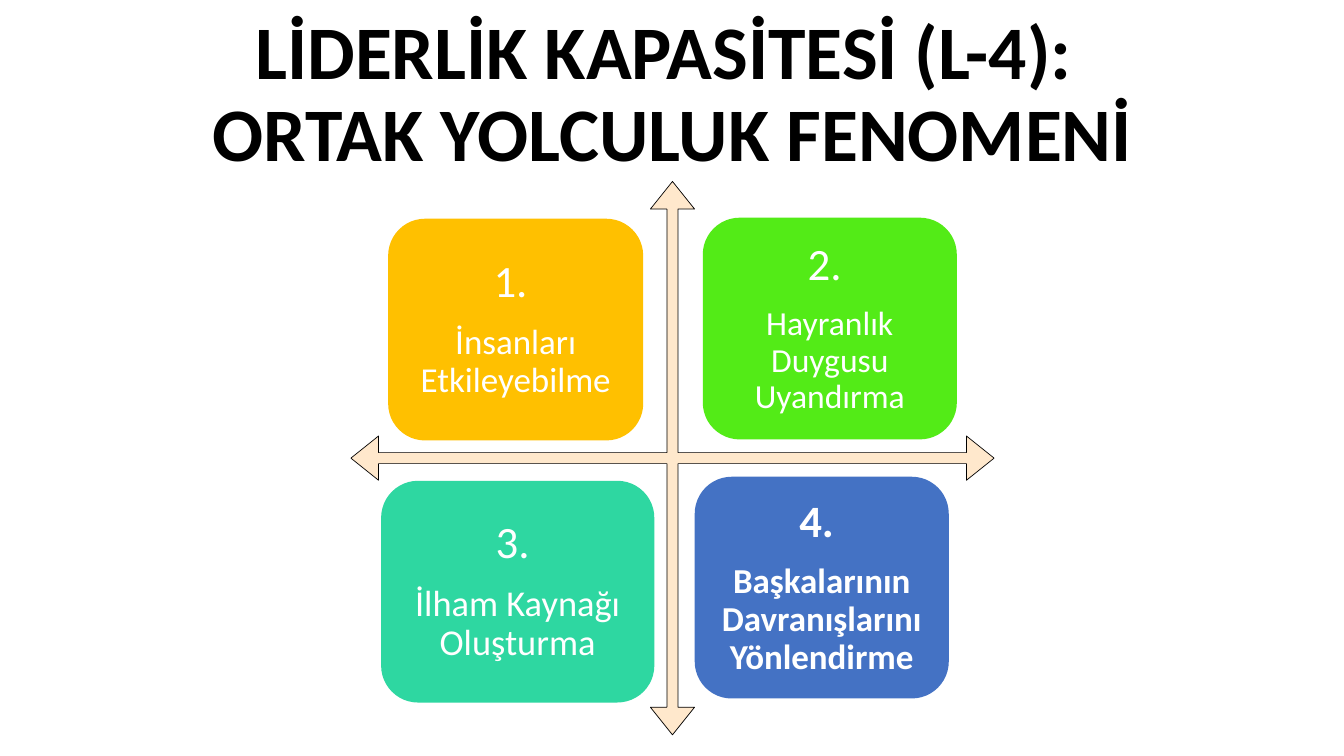
from pptx import Presentation
from pptx.dml.color import RGBColor
from pptx.enum.shapes import MSO_SHAPE
from pptx.enum.text import MSO_ANCHOR, PP_ALIGN
from pptx.util import Inches, Pt

FONT = "Calibri"
QUADRANTS = [
    # left, top, width, fill, number, caption, caption size, bold
    (3.85, 2.17, 2.53, "FFC000", "1. ", "İnsanları Etkileyebilme", 25, False),
    (6.97, 2.16, 2.52, "53EB17", "2. ", "Hayranlık Duygusu Uyandırma", 24, False),
    (3.78, 4.77, 2.71, "2ED7A1", "3. ", "İlham Kaynağı Oluşturma", 26, False),
    (6.89, 4.73, 2.52, "4472C4", "4. ",
     "Başkalarının Davranışlarını Yönlendirme", 25, True),
]
QUADRANT_HEIGHT = 2.2


def color(hex_code):
    return RGBColor.from_string(hex_code)


def write(paragraph, text, size, fill, bold=False, space_after=0):
    paragraph.text = text
    paragraph.alignment = PP_ALIGN.CENTER
    paragraph.line_spacing = 0.9
    paragraph.space_after = Pt(space_after)
    font = paragraph.font
    font.name, font.size, font.bold = FONT, Pt(size), bold
    font.color.rgb = color(fill)


def add_filled_shape(slide, preset, left, top, width, height, fill):
    shape = slide.shapes.add_shape(
        preset, Inches(left), Inches(top), Inches(width), Inches(height))
    shape.shadow.inherit = False
    shape.fill.solid()
    shape.fill.fore_color.rgb = color(fill)
    shape.line.fill.background()
    return shape


def add_title(slide, text):
    title = slide.shapes.add_textbox(
        Inches(0.92), Inches(0.4), Inches(11.5), Inches(1.11))
    frame = title.text_frame
    frame.word_wrap = True
    frame.vertical_anchor = MSO_ANCHOR.MIDDLE
    write(frame.paragraphs[0], text, size=54, fill="000000", bold=True)


def add_axes(slide):
    axes = add_filled_shape(
        slide, MSO_SHAPE.QUAD_ARROW, 3.48, 1.8, 6.38, 5.49, "FFE8CC")
    for index, ratio in enumerate((0.02, 0.04, 0.05)):
        axes.adjustments[index] = ratio
    axes.line.color.rgb = color("000000")
    axes.line.width = Pt(0.5)


def add_quadrant(slide, left, top, width, fill, number, caption, size, bold):
    quadrant = add_filled_shape(slide, MSO_SHAPE.ROUNDED_RECTANGLE,
                                left, top, width, QUADRANT_HEIGHT, fill)
    frame = quadrant.text_frame
    frame.word_wrap = True
    frame.vertical_anchor = MSO_ANCHOR.MIDDLE
    frame.margin_left = frame.margin_right = Inches(0.13)
    frame.margin_top = frame.margin_bottom = Inches(0.13)
    write(frame.paragraphs[0], number, size=32, fill="FFFFFF", bold=bold,
          space_after=12)
    write(frame.add_paragraph(), caption, size=size, fill="FFFFFF", bold=bold)


def main():
    presentation = Presentation()
    presentation.slide_width = Inches(13.33)
    presentation.slide_height = Inches(7.5)
    slide = presentation.slides.add_slide(presentation.slide_layouts[6])
    add_title(slide, "LİDERLİK KAPASİTESİ (L-4): \vORTAK YOLCULUK FENOMENİ")
    add_axes(slide)
    for quadrant in QUADRANTS:
        add_quadrant(slide, *quadrant)
    presentation.save("out.pptx")


if __name__ == "__main__":
    main()
